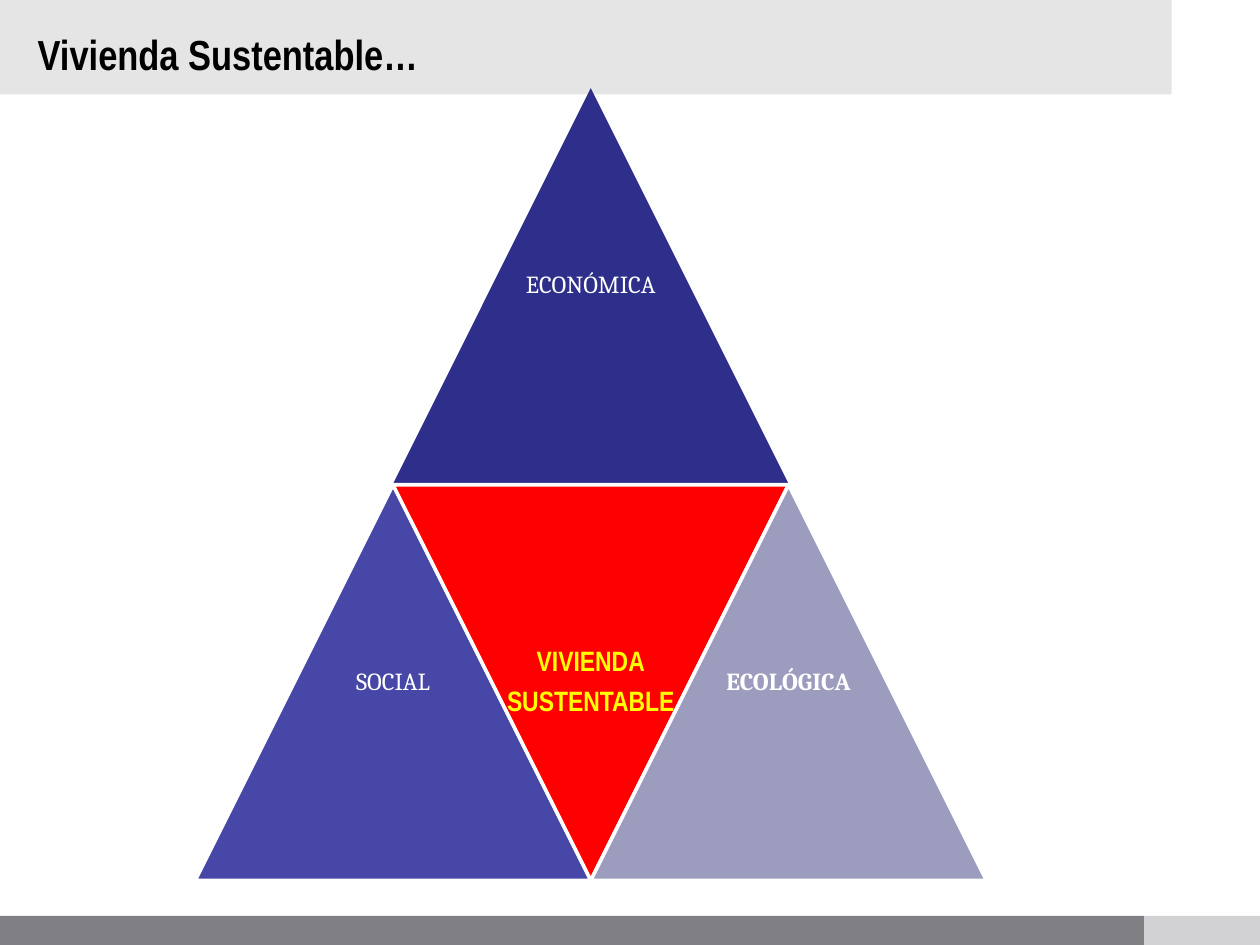
"""Build the sustainable housing triangle slide."""
from pptx import Presentation
from pptx.dml.color import RGBColor
from pptx.enum import shapes, text
from pptx.util import Pt

WHITE = RGBColor(0xFF, 0xFF, 0xFF)
BLACK = RGBColor(0x00, 0x00, 0x00)
YELLOW = RGBColor(0xFF, 0xFF, 0x00)
RED = RGBColor(0xFF, 0x00, 0x00)
NAVY = RGBColor(0x2E, 0x2E, 0x8B)
INDIGO = RGBColor(0x47, 0x47, 0xA8)
LAVENDER = RGBColor(0x9C, 0x9C, 0xBF)
HEADER_GREY = RGBColor(0xE5, 0xE5, 0xE5)
FOOTER_GREY = RGBColor(0x80, 0x7F, 0x84)
CORNER_GREY = RGBColor(0xD2, 0xD2, 0xD4)

SIDE, HALF, ROW = 226, 113, 226.6
LEFT, TOP = 111.6, 50.4


def add_filled(s, kind, box, color, outlined=False):
    sp = s.shapes.add_shape(kind, *map(Pt, box))
    sp.shadow.inherit = False
    sp.fill.solid()
    sp.fill.fore_color.rgb = color
    if outlined:
        sp.line.color.rgb = WHITE
        sp.line.width = Pt(2)
    else:
        sp.line.fill.background()
    return sp


def add_text(s, box, lines, font, size, color, bold=False, spacing=0.9, after=0.35,
             align=None, anchor=text.MSO_ANCHOR.TOP, inset=None):
    tf = s.shapes.add_textbox(*map(Pt, box)).text_frame
    tf.word_wrap = True
    tf.vertical_anchor = anchor
    if inset is not None:
        tf.margin_left = tf.margin_right = tf.margin_top = tf.margin_bottom = Pt(inset)
    tf.text = lines
    for p in tf.paragraphs:
        p.alignment = align
        p.line_spacing = spacing
        p.space_after = Pt(round(size * after, 1))
        for r in p.runs:
            r.font.name = font
            r.font.size = Pt(size)
            r.font.bold = bold
            r.font.color.rgb = color
    return tf


def add_triangle(s, column, row, color, label, font="Cambria", size=14,
                 label_color=WHITE, bold=False, inset=4.3, rotation=0):
    box = (LEFT + column * HALF, TOP + row * ROW, SIDE, SIDE)
    sp = add_filled(s, shapes.MSO_SHAPE.ISOSCELES_TRIANGLE, box, color, outlined=row > 0)
    sp.rotation = rotation
    add_text(s, box, label, font, size, label_color, bold,
             align=text.PP_ALIGN.CENTER, anchor=text.MSO_ANCHOR.MIDDLE, inset=inset)


def add_bands(s):
    for box, color in (((0, 0, 669.6, 54), HEADER_GREY),
                       ((0, 523.4, 653.8, 16.6), FOOTER_GREY),
                       ((653.8, 523.4, 66.2, 16.6), CORNER_GREY)):
        add_filled(s, shapes.MSO_SHAPE.RECTANGLE, box, color)


def main():
    prs = Presentation()
    prs.slide_width, prs.slide_height = Pt(720), Pt(540)
    s = prs.slides.add_slide(prs.slide_layouts[6])
    add_bands(s)
    tf = add_text(s, (14.4, 7.2, 655.2, 31.7), "Vivienda Sustentable…", "Arial Narrow", 24,
                  BLACK, bold=True, spacing=1.1, after=0.1)
    tf.margin_top = Pt(6)
    add_triangle(s, 1, 0, NAVY, "ECONÓMICA")
    add_triangle(s, 0, 1, INDIGO, "SOCIAL")
    add_triangle(s, 1, 1, RED, "VIVIENDA\nSUSTENTABLE", "Arial Narrow", 16,
                 YELLOW, bold=True, inset=4.8, rotation=180)
    add_triangle(s, 2, 1, LAVENDER, "ECOLÓGICA", bold=True)
    prs.save("out.pptx")


if __name__ == "__main__":
    main()
